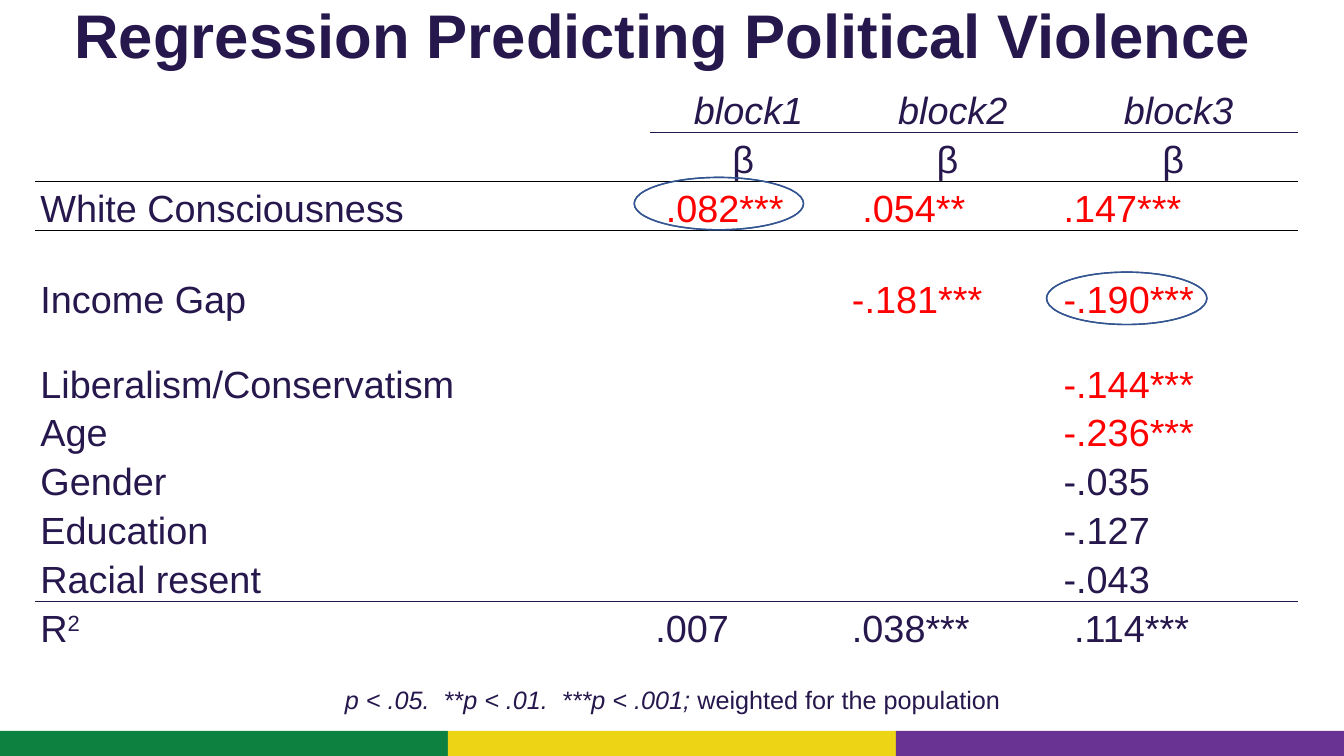
from dataclasses import dataclass

from lxml.etree import SubElement
from pptx import Presentation
from pptx.dml.color import RGBColor
from pptx.enum.shapes import MSO_SHAPE
from pptx.enum.text import MSO_ANCHOR, MSO_AUTO_SIZE, PP_ALIGN
from pptx.oxml.ns import qn
from pptx.util import Inches, Length, Pt

SLIDE_WIDTH, SLIDE_HEIGHT = Inches(13.33), Inches(7.5)
COLORS = {
    "ink": "26174D",
    "red": "FF0000",
    "black": "000000",
    "green": "0D8240",
    "yellow": "EDD414",
    "purple": "693394",
    "ring fill": "4472C4",
    "ring line": "325491",
}
NO_STYLE = "{2D5ABB26-0587-4C30-8999-92F81FD0307C}"
COLUMN_SHARES = (45.76, 14.63, 15.75, 17.85)
TALL, SHORT = 6.47, 5.6


@dataclass
class Area:
    left: float
    top: float
    width: float
    height: float

    def lengths(self) -> tuple[Length, ...]:
        return (across(self.left), down(self.top), across(self.width), down(self.height))


@dataclass
class Row:
    texts: tuple[str, ...] = ("", "", "", "")
    height: float = TALL
    spacing: float = 1.15
    header: bool = False
    italic: bool = False
    highlight: bool = True
    superscript: str = ""
    rule: str = ""
    rule_start: int = 0


ROWS = (
    Row(("", "block1", "block2", "block3"), header=True, italic=True, rule="ink", rule_start=1),
    Row(("", "β ", "β ", "β "), header=True, rule="black"),
    Row(("White Consciousness", " .082***", " .054**", ".147***")),
    Row(height=SHORT),
    Row(("Income Gap", "", "-.181***", "-.190***")),
    Row(height=SHORT),
    Row(("Liberalism/Conservatism", "", "", "-.144***"), height=SHORT, spacing=1.0),
    Row(("Age", "", "", "-.236***")),
    Row(("Gender", "", "", "-.035")),
    Row(("Education", "", "", "-.127")),
    Row(("Racial resent", "", "", "-.043"), rule="ink"),
    Row(("R", ".007", ".038***", " .114***"), highlight=False, superscript="2"),
)
TITLE_AREA = Area(0, -0.27, 100, 10.8)
TABLE_AREA = Area(2.63, 11.07, sum(COLUMN_SHARES), sum(row.height for row in ROWS))
NOTE_AREA = Area(21.31, 89.87, 57.46, 9.47)
RING_AREAS = (Area(47.19, 23.47, 12.6, 6.93), Area(77.87, 36, 11.93, 6.93))


def across(percent: float) -> Length:
    return Length(round(SLIDE_WIDTH * percent / 100))


def down(percent: float) -> Length:
    return Length(round(SLIDE_HEIGHT * percent / 100))


def color(name: str) -> RGBColor:
    return RGBColor.from_string(COLORS[name])


def set_font(font, size: float, name: str = "ink") -> None:
    font.name = "Arial"
    font.size = Pt(size)
    font.color.rgb = color(name)


def add_preset(page, kind: MSO_SHAPE, area: Area, fill: str):
    shape = page.shapes.add_shape(kind, *area.lengths())
    shape.shadow.inherit = False
    shape.fill.solid()
    shape.fill.fore_color.rgb = color(fill)
    shape.line.fill.background()
    return shape


def add_stripes(page) -> None:
    names = ("green", "yellow", "purple")
    width = 100 / len(names)
    for index, name in enumerate(names):
        add_preset(page, MSO_SHAPE.RECTANGLE, Area(index * width, 96.67, width, 3.33), name)


def add_border(cell, side: str, name: str) -> None:
    border = SubElement(cell._tc.get_or_add_tcPr(), qn(f"a:{side}"), w=str(Pt(1)))
    SubElement(SubElement(border, qn("a:solidFill")), qn("a:srgbClr"), val=COLORS[name])


def fill_cell(cell, row: Row, column: int) -> None:
    text = row.texts[column]
    cell.margin_left = cell.margin_right = Inches(0.05)
    cell.margin_top = cell.margin_bottom = 0
    cell.vertical_anchor = MSO_ANCHOR.MIDDLE if row.header and not row.italic else MSO_ANCHOR.TOP
    if not text:
        return
    para = cell.text_frame.paragraphs[0]
    para.line_spacing = row.spacing
    para.alignment = PP_ALIGN.CENTER if row.header else PP_ALIGN.LEFT
    set_font(para.font, 27, "red" if row.highlight and "*" in text else "ink")
    para.font.italic = row.italic
    para.add_run().text = text
    if row.superscript and column == 0:
        span = para.add_run()
        span.text = row.superscript
        span.font._element.set("baseline", "30000")


def add_regression_table(page) -> None:
    frame = page.shapes.add_table(len(ROWS), len(COLUMN_SHARES), *TABLE_AREA.lengths())
    table = frame.table
    table.first_row = table.horz_banding = False
    table._tbl.tblPr.find(qn("a:tableStyleId")).text = NO_STYLE
    for column, share in zip(table.columns, COLUMN_SHARES):
        column.width = across(share)
    for index, row in enumerate(ROWS):
        table.rows[index].height = down(row.height)
        above = ROWS[index - 1] if index else Row()
        for column in range(len(COLUMN_SHARES)):
            cell = table.cell(index, column)
            fill_cell(cell, row, column)
            for side, owner in (("lnT", above), ("lnB", row)):
                if owner.rule and column >= owner.rule_start:
                    add_border(cell, side, owner.rule)
            cell.fill.background()


def add_title(page) -> None:
    title = page.shapes.title
    title.left, title.top, title.width, title.height = TITLE_AREA.lengths()
    title.text_frame.text = "Regression Predicting Political Violence "
    title.text_frame.auto_size = MSO_AUTO_SIZE.NONE
    title.text_frame.vertical_anchor = MSO_ANCHOR.MIDDLE
    para = title.text_frame.paragraphs[0]
    para.alignment = PP_ALIGN.CENTER
    para.line_spacing = 0.9
    set_font(para.font, 44)
    para.font.bold = True


def add_rings(page) -> None:
    for area in RING_AREAS:
        ring = add_preset(page, MSO_SHAPE.DONUT, area, "ring fill")
        ring.adjustments[0] = 0
        ring.line.color.rgb = color("ring line")
        ring.line.width = Pt(1)


def add_note(page) -> None:
    box = page.shapes.add_textbox(*NOTE_AREA.lengths())
    box.text_frame.word_wrap = True
    para = box.text_frame.paragraphs[0]
    para.alignment = PP_ALIGN.CENTER
    set_font(para.font, 18)
    levels = "p < .05.  **p < .01.  ***p < .001; "
    for text, italic in ((levels, True), ("weighted for the population", False)):
        span = para.add_run()
        span.text = text
        span.font.italic = italic


def main() -> None:
    deck = Presentation()
    deck.slide_width, deck.slide_height = SLIDE_WIDTH, SLIDE_HEIGHT
    page = deck.slides.add_slide(deck.slide_layouts.get_by_name("Title Only"))
    add_stripes(page)
    add_regression_table(page)
    add_title(page)
    add_rings(page)
    add_note(page)
    deck.save("out.pptx")


if __name__ == "__main__":
    main()
